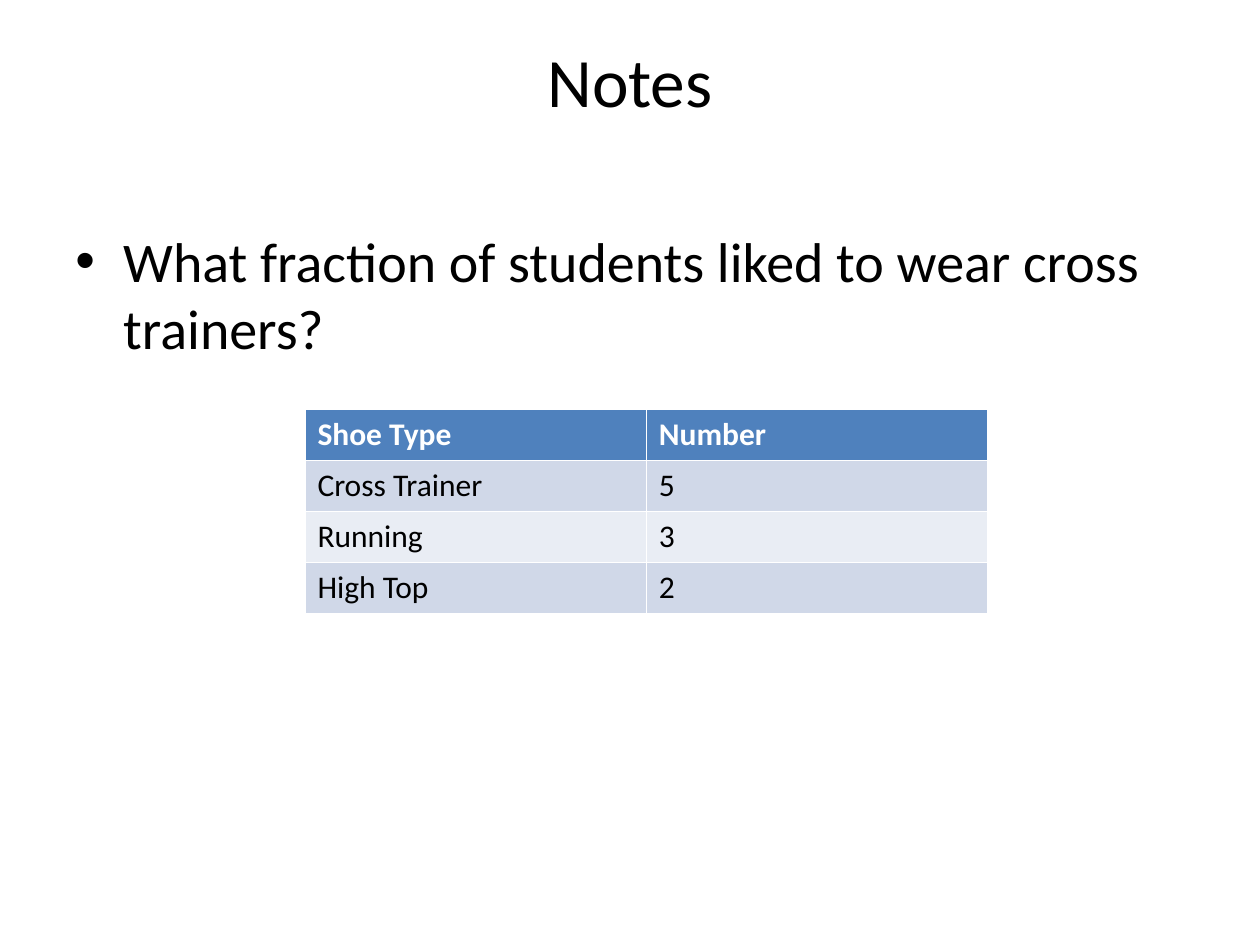
from pptx import Presentation
from pptx.dml.color import RGBColor
from pptx.enum.text import PP_ALIGN
from pptx.oxml.ns import qn
from pptx.util import Inches, Pt

LEFT, CENTER = PP_ALIGN.LEFT, PP_ALIGN.CENTER
BLACK = RGBColor(0x00, 0x00, 0x00)
WHITE = RGBColor(0xFF, 0xFF, 0xFF)
HEADER_BLUE = RGBColor(0x4F, 0x81, 0xBD)
BAND_DARK = RGBColor(0xD0, 0xD8, 0xE8)
BAND_LIGHT = RGBColor(0xE9, 0xED, 0xF4)


def write_text(tf, text, size=18, color=BLACK, bold=False, align=LEFT):
    tf.word_wrap = True
    p = tf.paragraphs[0]
    p.alignment = align
    r = p.add_run()
    r.text = text
    r.font.name = "Calibri"
    r.font.size = Pt(size)
    r.font.bold = bold
    r.font.color.rgb = color
    return p


prs = Presentation()
prs.slide_width, prs.slide_height = Inches(10), Inches(7.5)
s = prs.slides.add_slide(prs.slide_layouts[6])

# Title
title = s.shapes.add_textbox(Inches(0.5), Inches(0.3), Inches(9), Inches(1.25))
title.text_frame.margin_top = 0
write_text(title.text_frame, "Notes", size=39.6, align=CENTER)

# Bulleted question
body = s.shapes.add_textbox(Inches(0.5), Inches(1.75), Inches(9), Inches(4.95))
p = write_text(body.text_frame, "What fraction of students liked to wear cross trainers?", size=32)
pPr = p._p.get_or_add_pPr()
pPr.set("marL", str(Inches(0.38)))
pPr.set("indent", str(-Inches(0.38)))
bullet_font = pPr.makeelement(qn("a:buFont"), {"typeface": "Arial"})
bullet = pPr.makeelement(qn("a:buChar"), {"char": "•"})
pPr.extend([bullet_font, bullet])

# Shoe table; its default style draws the white cell borders
rows = [
    ("Shoe Type", "Number"),
    ("Cross Trainer", "5"),
    ("Running", "3"),
    ("High Top", "2"),
]
table = s.shapes.add_table(
    len(rows), 2, Inches(2.42), Inches(3.25), Inches(5.42), Inches(1.62)
).table
for i, row in enumerate(rows):
    header = i == 0
    band = BAND_DARK if i % 2 else BAND_LIGHT
    for j, text in enumerate(row):
        cell = table.cell(i, j)
        cell.fill.solid()
        cell.fill.fore_color.rgb = HEADER_BLUE if header else band
        write_text(cell.text_frame, text, color=WHITE if header else BLACK, bold=header)

prs.save("out.pptx")
